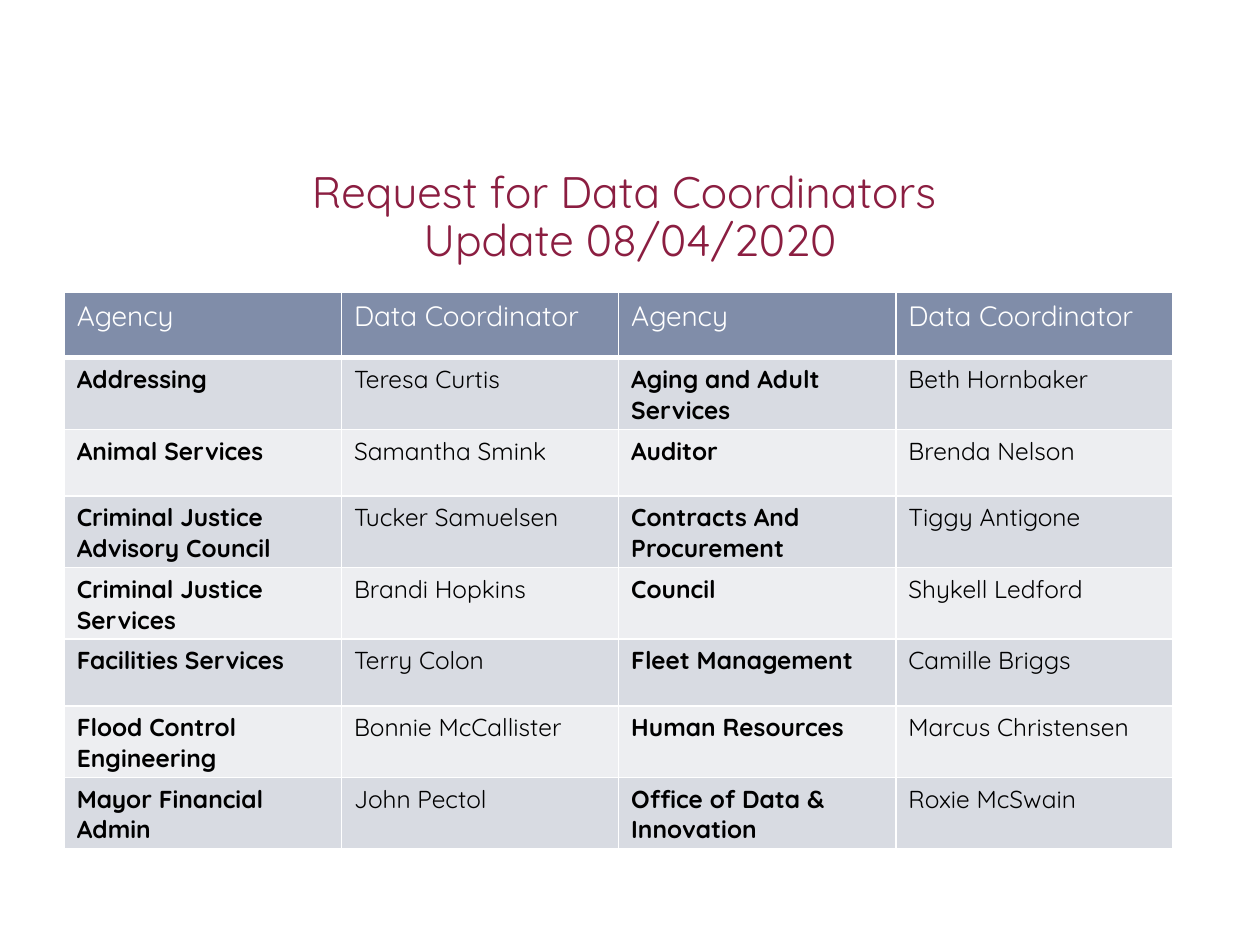
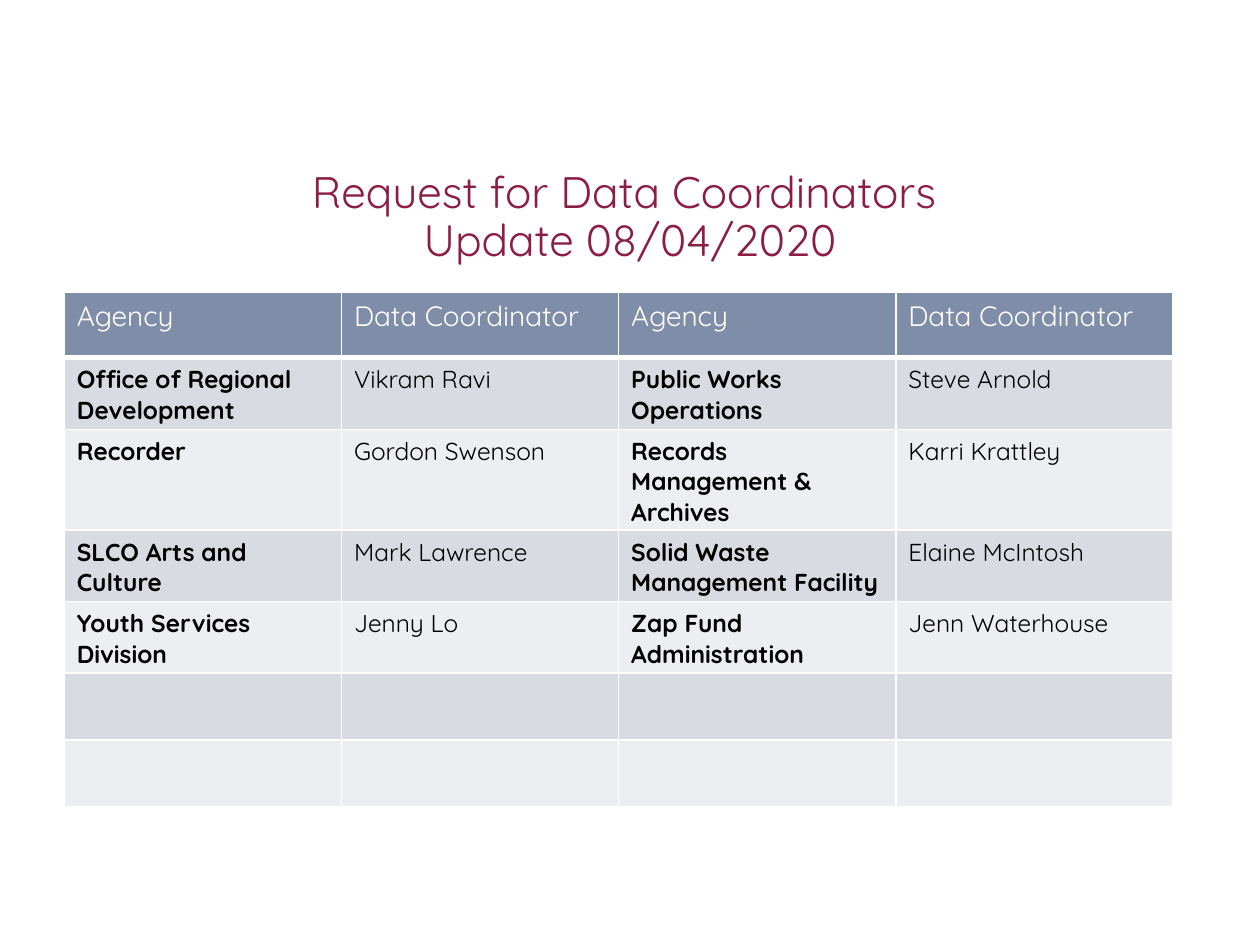
import lxml.etree
import pptx
import pptx.dml.color
import pptx.enum.text
import pptx.oxml.ns
import pptx.util

Inches = pptx.util.Inches
Pt = pptx.util.Pt

FONT = "Quicksand"
COLORS = {
    "title": "8B1E41",
    "header": "808DA9",
    "band_dark": "D8DBE2",
    "band_light": "EDEEF1",
    "grid": "FFFFFF",
    "header_text": "FFFFFF",
    "body_text": "000000",
}
TITLE_LINES = ["Request for Data Coordinators ", "Update 08/04/2020"]
TITLE_BOX = (0.69, 1.34, 8.62, 0.83)
TABLE_BOX = (0.51, 2.32, 8.8)
HEADER_HEIGHT, ROW_HEIGHT = 0.52, 0.53
HEADINGS = ["Agency", "Data Coordinator"] * 2

COORDINATORS_A_TO_O = [
    ["Addressing", "Teresa Curtis", "Aging and Adult Services", "Beth Hornbaker"],
    ["Animal Services", "Samantha Smink", "Auditor", "Brenda Nelson"],
    ["Criminal Justice Advisory Council", "Tucker Samuelsen",
     "Contracts And Procurement", "Tiggy Antigone"],
    ["Criminal Justice Services", "Brandi Hopkins", "Council", "Shykell Ledford"],
    ["Facilities Services", "Terry Colon", "Fleet Management", "Camille Briggs"],
    ["Flood Control Engineering", "Bonnie McCallister",
     "Human Resources", "Marcus Christensen"],
    ["Mayor Financial Admin", "John Pectol",
     "Office of Data & Innovation", "Roxie McSwain"],
]
COORDINATORS_O_TO_Z = [
    ["Office of Regional Development", "Vikram Ravi",
     "Public Works Operations", "Steve Arnold"],
    ["Recorder", "Gordon Swenson", "Records Management & Archives", "Karri Krattley"],
    ["SLCO Arts and Culture", "Mark Lawrence",
     "Solid Waste Management Facility", "Elaine McIntosh"],
    ["Youth Services Division", "Jenny Lo", "Zap Fund Administration", "Jenn Waterhouse"],
    [""] * 4,
    [""] * 4,
]


def rgb(name):
    return pptx.dml.color.RGBColor.from_string(COLORS[name])


def add_run(paragraph, text, size, color, bold=False):
    run = paragraph.add_run()
    run.text = text
    run.font.name = FONT
    run.font.size = Pt(size)
    run.font.bold = bold
    run.font.color.rgb = rgb(color)


def add_title(slide, box):
    frame = slide.shapes.add_textbox(*map(Inches, box)).text_frame
    frame.word_wrap = True
    frame.vertical_anchor = pptx.enum.text.MSO_ANCHOR.MIDDLE
    for index, line in enumerate(TITLE_LINES):
        paragraph = frame.add_paragraph() if index else frame.paragraphs[0]
        paragraph.alignment = pptx.enum.text.PP_ALIGN.CENTER
        paragraph.line_spacing = 0.7
        paragraph.space_after = Pt(6)
        add_run(paragraph, line, 25.2, "title")


def set_borders(cell, bottom):
    """Draw 1 pt grid lines round a cell, with its own width at the bottom."""
    properties = cell._tc.get_or_add_tcPr()
    qn = pptx.oxml.ns.qn
    for side, width in (("L", 1), ("R", 1), ("T", 1), ("B", bottom)):
        line = lxml.etree.SubElement(properties, qn(f"a:ln{side}"), w=str(Pt(width)))
        fill = lxml.etree.SubElement(line, qn("a:solidFill"))
        lxml.etree.SubElement(fill, qn("a:srgbClr"), val=COLORS["grid"])


def fill_cell(cell, text, fill, size, color, bold, bottom=1):
    set_borders(cell, bottom)
    cell.fill.solid()
    cell.fill.fore_color.rgb = rgb(fill)
    if text:
        add_run(cell.text_frame.paragraphs[0], text, size, color, bold)


def add_coordinator_table(slide, box, coordinators):
    left, top, width = box
    height = HEADER_HEIGHT + ROW_HEIGHT * len(coordinators)
    table = slide.shapes.add_table(
        len(coordinators) + 1, len(HEADINGS),
        Inches(left), Inches(top), Inches(width), Inches(height)).table
    for column in table.columns:
        column.width = Inches(width / len(HEADINGS))
    for index, row in enumerate(table.rows):
        row.height = Inches(ROW_HEIGHT if index else HEADER_HEIGHT)

    for col, heading in enumerate(HEADINGS):
        fill_cell(table.cell(0, col), heading, "header", 16, "header_text", False, bottom=3)
    for row, entries in enumerate(coordinators, start=1):
        band = "band_dark" if row % 2 else "band_light"
        for col, entry in enumerate(entries):
            is_agency = col % 2 == 0
            fill_cell(table.cell(row, col), entry, band, 14, "body_text", is_agency)


def add_coordinator_slide(deck, coordinators):
    slide = deck.slides.add_slide(deck.slide_layouts[6])
    add_title(slide, TITLE_BOX)
    add_coordinator_table(slide, TABLE_BOX, coordinators)


def main():
    deck = pptx.Presentation()
    deck.slide_width, deck.slide_height = Inches(10), Inches(7.5)
    for coordinators in (COORDINATORS_A_TO_O, COORDINATORS_O_TO_Z):
        add_coordinator_slide(deck, coordinators)
    deck.save("out.pptx")


if __name__ == "__main__":
    main()
